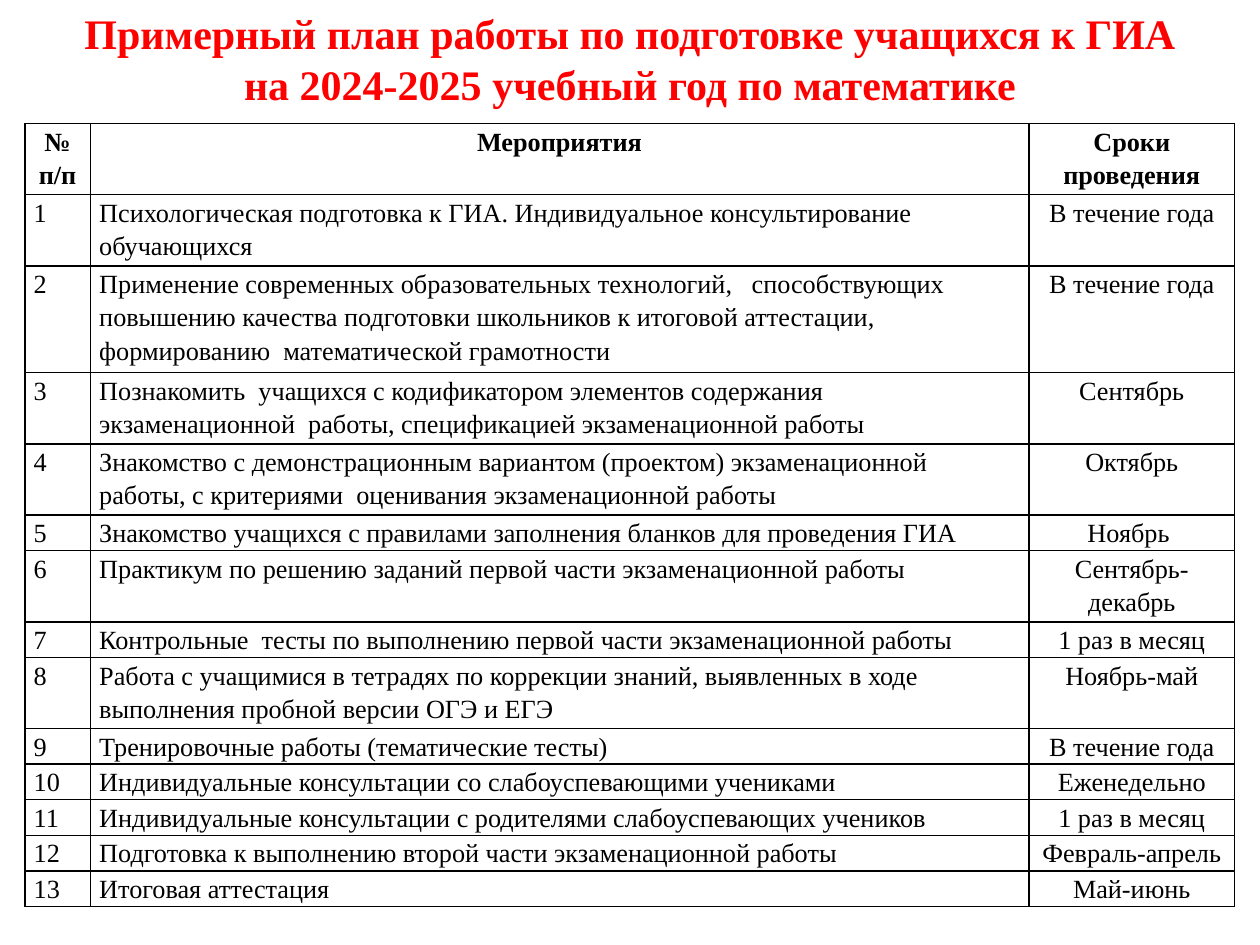
from typing import NamedTuple

from lxml.etree import SubElement
from pptx import Presentation
from pptx.dml.color import RGBColor
from pptx.enum.text import MSO_ANCHOR, MSO_AUTO_SIZE, PP_ALIGN
from pptx.oxml.ns import qn
from pptx.util import Cm, Pt

FONT = "Times New Roman"
BLACK, RED = "000000", "FF0000"
COLUMN_WIDTHS = (1.32, 18.92, 4.15)
TABLE_HEIGHT = 15.79


class PlanRow(NamedTuple):
    activity: str
    period: str
    lines: int = 1


PLAN = (
    PlanRow("Психологическая подготовка к ГИА. Индивидуальное консультирование "
            "обучающихся", "В течение года", 2),
    PlanRow("Применение современных образовательных технологий,   способствующих "
            "повышению качества подготовки школьников к итоговой аттестации, "
            "формированию  математической грамотности", "В течение года", 3),
    PlanRow("Познакомить  учащихся с кодификатором элементов содержания "
            "экзаменационной  работы, спецификацией экзаменационной работы",
            "Сентябрь", 2),
    PlanRow("Знакомство с демонстрационным вариантом (проектом) экзаменационной "
            "работы, с критериями  оценивания экзаменационной работы", "Октябрь", 2),
    PlanRow("Знакомство учащихся с правилами заполнения бланков для проведения ГИА",
            "Ноябрь "),
    PlanRow("Практикум по решению заданий первой части экзаменационной работы",
            "Сентябрь-декабрь", 2),
    PlanRow("Контрольные  тесты по выполнению первой части экзаменационной работы",
            "1 раз в месяц"),
    PlanRow("Работа с учащимися в тетрадях по коррекции знаний, выявленных в ходе "
            "выполнения пробной версии ОГЭ и ЕГЭ", "Ноябрь-май", 2),
    PlanRow("Тренировочные работы (тематические тесты)", "В течение года"),
    PlanRow("Индивидуальные консультации со слабоуспевающими учениками", "Еженедельно"),
    PlanRow("Индивидуальные консультации с родителями слабоуспевающих учеников",
            "1 раз в месяц"),
    PlanRow("Подготовка к выполнению второй части экзаменационной работы",
            "Февраль-апрель"),
    PlanRow("Итоговая аттестация", "Май-июнь"),
)


def rgb(color: str) -> RGBColor:
    return RGBColor.from_string(color)


def write(tf, text: str, size: float, color: str, bold: bool, align: PP_ALIGN,
          line_spacing: float = 1.0) -> None:
    tf.text = text
    p = tf.paragraphs[0]
    p.alignment = align
    p.line_spacing = line_spacing
    font = p.runs[0].font
    font.name, font.size, font.bold = FONT, Pt(size), bold
    font.color.rgb = rgb(color)


def add_borders(cell, color: str, width: float) -> None:
    tc_pr = cell._tc.get_or_add_tcPr()
    for i, side in enumerate(("lnL", "lnR", "lnT", "lnB")):
        ln = SubElement(tc_pr, qn(f"a:{side}"), w=str(Pt(width)))
        fill = SubElement(ln, qn("a:solidFill"))
        SubElement(fill, qn("a:srgbClr"), val=color)
        tc_pr.insert(i, ln)


def fill_cell(cell, text: str, bold: bool, align: PP_ALIGN) -> None:
    cell.margin_left = cell.margin_right = Cm(0.18)
    cell.margin_top = cell.margin_bottom = 0
    cell.fill.background()
    write(cell.text_frame, text, 15, BLACK, bold, align, 1.15)
    add_borders(cell, BLACK, 1)


def add_title(s, text: str) -> None:
    title = s.shapes.title
    title.left, title.top, title.width, title.height = Cm(1.27), 0, Cm(22.86), Cm(2.34)
    tf = title.text_frame
    tf.word_wrap = True
    tf.auto_size = MSO_AUTO_SIZE.NONE
    tf.vertical_anchor = MSO_ANCHOR.MIDDLE
    write(tf, text, 24, RED, True, PP_ALIGN.CENTER)


def add_plan(s, header: PlanRow, plan: tuple[PlanRow, ...]) -> None:
    """Draw the plan with row heights proportional to their text lines."""
    rows = (header, *plan)
    line_height = Cm(TABLE_HEIGHT) // sum(row.lines for row in rows)
    table = s.shapes.add_table(len(rows), len(COLUMN_WIDTHS), Cm(0.5), Cm(2.49),
                               Cm(sum(COLUMN_WIDTHS)), Cm(TABLE_HEIGHT)).table
    table.horz_banding = False
    for column, width in zip(table.columns, COLUMN_WIDTHS):
        column.width = Cm(width)
    for i, row in enumerate(rows):
        table.rows[i].height = line_height * row.lines
        is_header = i == 0
        left = PP_ALIGN.CENTER if is_header else PP_ALIGN.LEFT
        number = "№ п/п" if is_header else str(i)
        fill_cell(table.cell(i, 0), number, is_header, left)
        fill_cell(table.cell(i, 1), row.activity, is_header, left)
        fill_cell(table.cell(i, 2), row.period, is_header, PP_ALIGN.CENTER)


def main() -> None:
    prs = Presentation()
    prs.slide_width, prs.slide_height = Cm(25.4), Cm(19.05)
    s = prs.slides.add_slide(prs.slide_layouts[5])
    add_title(s, "Примерный план работы по подготовке учащихся к ГИА "
                 "на 2024-2025 учебный год по математике")
    add_plan(s, PlanRow("Мероприятия", "Сроки проведения", 2), PLAN)
    prs.save("out.pptx")


if __name__ == "__main__":
    main()
